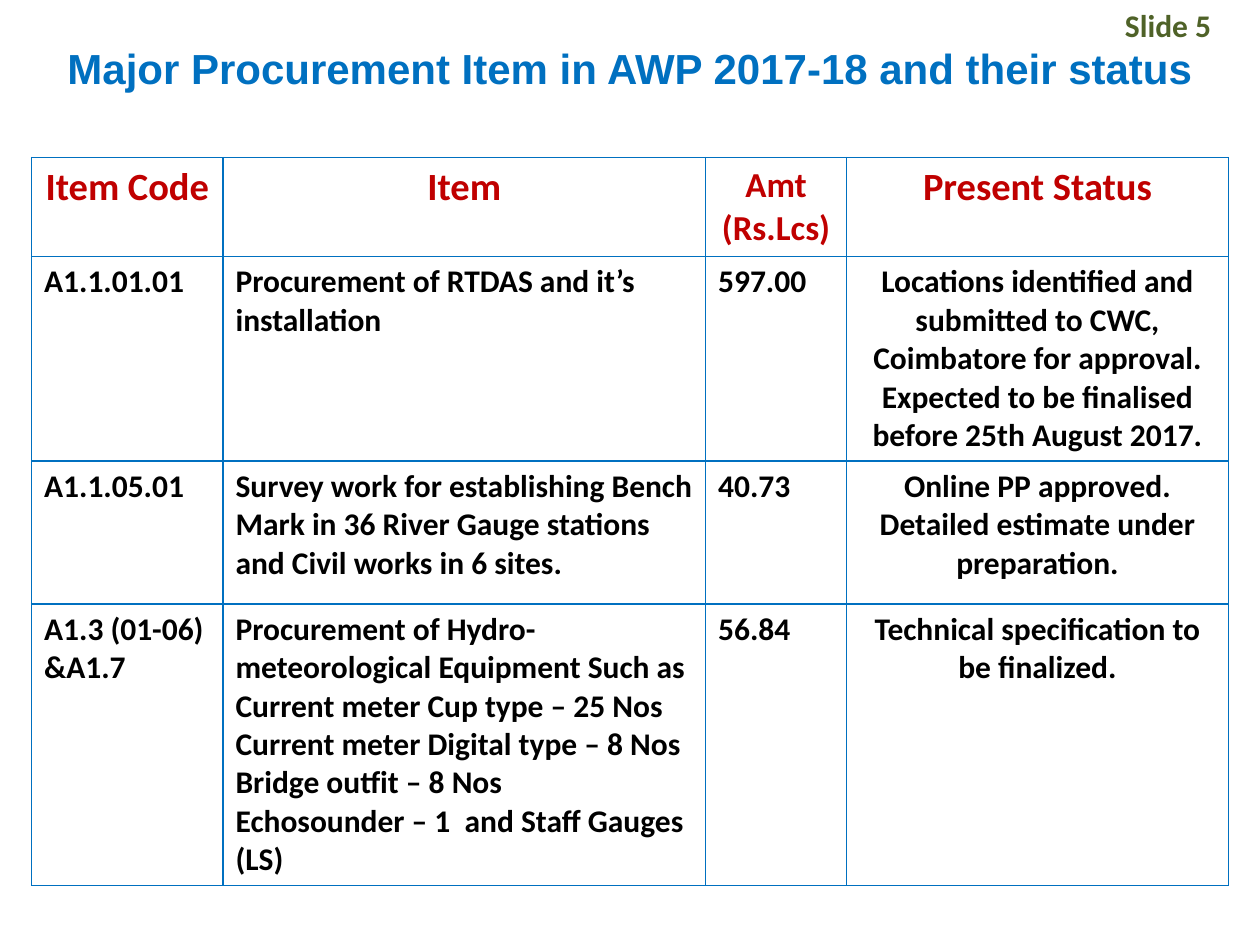
from lxml import etree
from pptx import Presentation
from pptx.dml.color import RGBColor
from pptx.enum import text
from pptx.oxml import ns
from pptx.util import Pt

BLUE = RGBColor(0x00, 0x70, 0xC0)
RED = RGBColor(0xC0, 0x00, 0x00)
GREEN = RGBColor(0x4F, 0x62, 0x28)
BLACK = RGBColor(0x00, 0x00, 0x00)

LEFT = text.PP_ALIGN.LEFT
CENTER = text.PP_ALIGN.CENTER

COLUMN_WIDTHS = [109.44, 275.76, 80.64, 218.16]
ROW_HEIGHTS = [56.5, 117, 81.5, 161]
HEADINGS = ["Item Code", "Item", "Amt (Rs.Lcs)", "Present Status"]
HEADING_SIZES = [22, 22, 20, 22]
ITEMS = [
    ["A1.1.01.01", "Procurement of RTDAS and it’s installation", "597.00",
     "Locations identified and submitted to CWC, Coimbatore for approval. "
     "Expected to be finalised before 25th August 2017."],
    ["A1.1.05.01",
     "Survey work for establishing Bench Mark in 36 River Gauge stations "
     "and Civil works in 6 sites.", "40.73",
     "Online PP approved. Detailed estimate under preparation."],
    ["A1.3 (01-06) &A1.7",
     "Procurement of Hydro-meteorological Equipment Such as "
     "Current meter Cup type – 25 Nos\n"
     "Current meter Digital type – 8 Nos\n"
     "Bridge outfit – 8 Nos\n"
     "Echosounder – 1  and Staff Gauges (LS)", "56.84",
     "Technical specification to be finalized."],
]


def write_text(frame, content, *, size=18, color=BLACK, font="Calibri", align=LEFT):
    frame.text = content
    for para in frame.paragraphs:
        para.alignment = align
        for span in para.runs:
            span.font.name = font
            span.font.size = Pt(size)
            span.font.bold = True
            span.font.color.rgb = color


def add_borders(cell, color, width):
    properties = cell._tc.get_or_add_tcPr()
    for side in ("a:lnL", "a:lnR", "a:lnT", "a:lnB"):
        line = etree.SubElement(properties, ns.qn(side), w=str(Pt(width)))
        fill = etree.SubElement(line, ns.qn("a:solidFill"))
        etree.SubElement(fill, ns.qn("a:srgbClr"), val=str(color))


def format_title(page):
    title = page.shapes.title
    title.left, title.top = Pt(0), Pt(23.76)
    title.width, title.height = Pt(720), Pt(30.24)
    title.text_frame.vertical_anchor = text.MSO_ANCHOR.MIDDLE
    write_text(title.text_frame, "Major Procurement Item in AWP 2017-18 and their status",
               size=24, color=BLUE, font="Arial", align=CENTER)


def add_slide_label(page):
    box = page.shapes.add_textbox(Pt(635.76), Pt(0), Pt(120), Pt(28.8))
    box.text_frame.word_wrap = True
    box.text_frame.auto_size = text.MSO_AUTO_SIZE.SHAPE_TO_FIT_TEXT
    write_text(box.text_frame, "Slide 5", color=GREEN)


def add_status_table(page):
    table = page.shapes.add_table(
        len(ROW_HEIGHTS), len(COLUMN_WIDTHS), Pt(18), Pt(90),
        Pt(sum(COLUMN_WIDTHS)), Pt(sum(ROW_HEIGHTS))).table
    table.first_row = False
    table.horz_banding = False
    for column, width in zip(table.columns, COLUMN_WIDTHS):
        column.width = Pt(width)
    for row, height in zip(table.rows, ROW_HEIGHTS):
        row.height = Pt(height)
    for cell in table.iter_cells():
        add_borders(cell, BLUE, 1)
        cell.fill.background()
    for index, (heading, size) in enumerate(zip(HEADINGS, HEADING_SIZES)):
        write_text(table.cell(0, index).text_frame, heading,
                   size=size, color=RED, align=CENTER)
    status_column = len(HEADINGS) - 1
    for row_index, item in enumerate(ITEMS, start=1):
        for index, content in enumerate(item):
            write_text(table.cell(row_index, index).text_frame, content,
                       align=CENTER if index == status_column else LEFT)


def main():
    deck = Presentation()
    deck.slide_width, deck.slide_height = Pt(720), Pt(540)
    page = deck.slides.add_slide(deck.slide_layouts.get_by_name("Title Only"))
    add_status_table(page)
    format_title(page)
    add_slide_label(page)
    deck.save("out.pptx")


if __name__ == "__main__":
    main()
